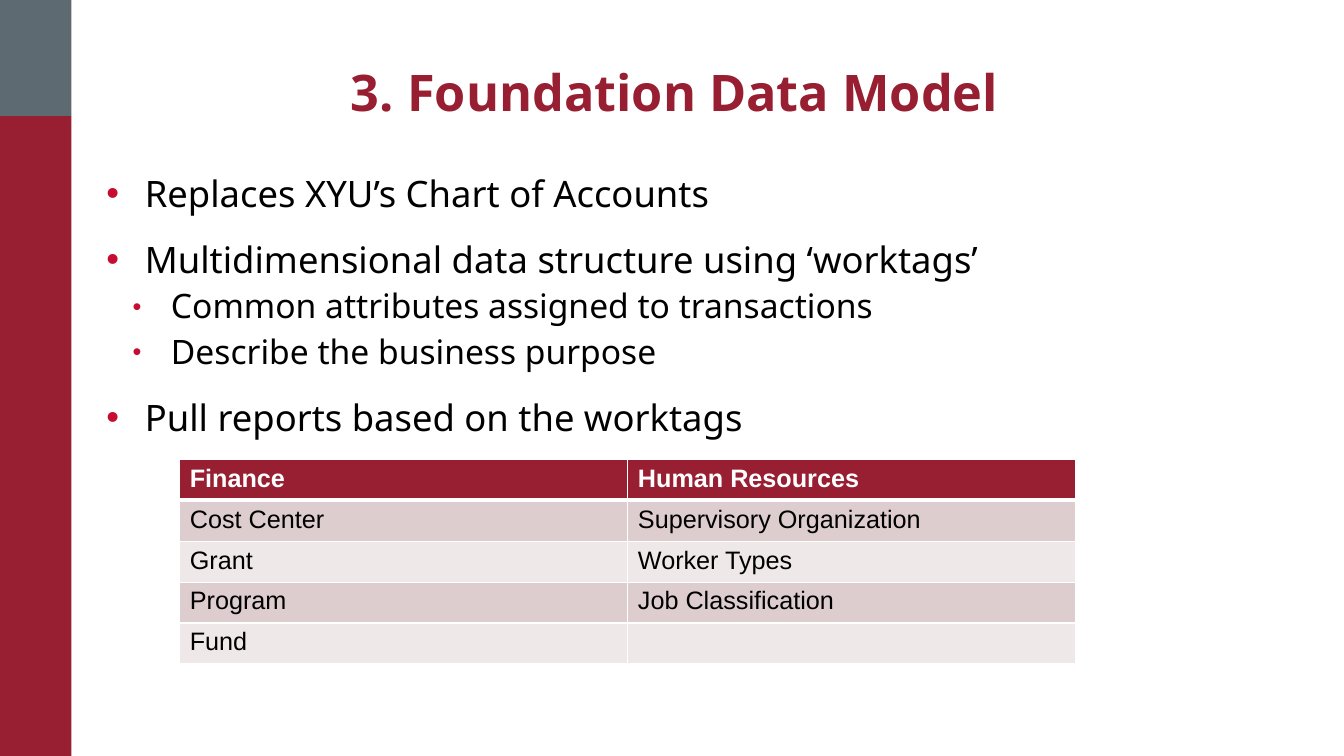
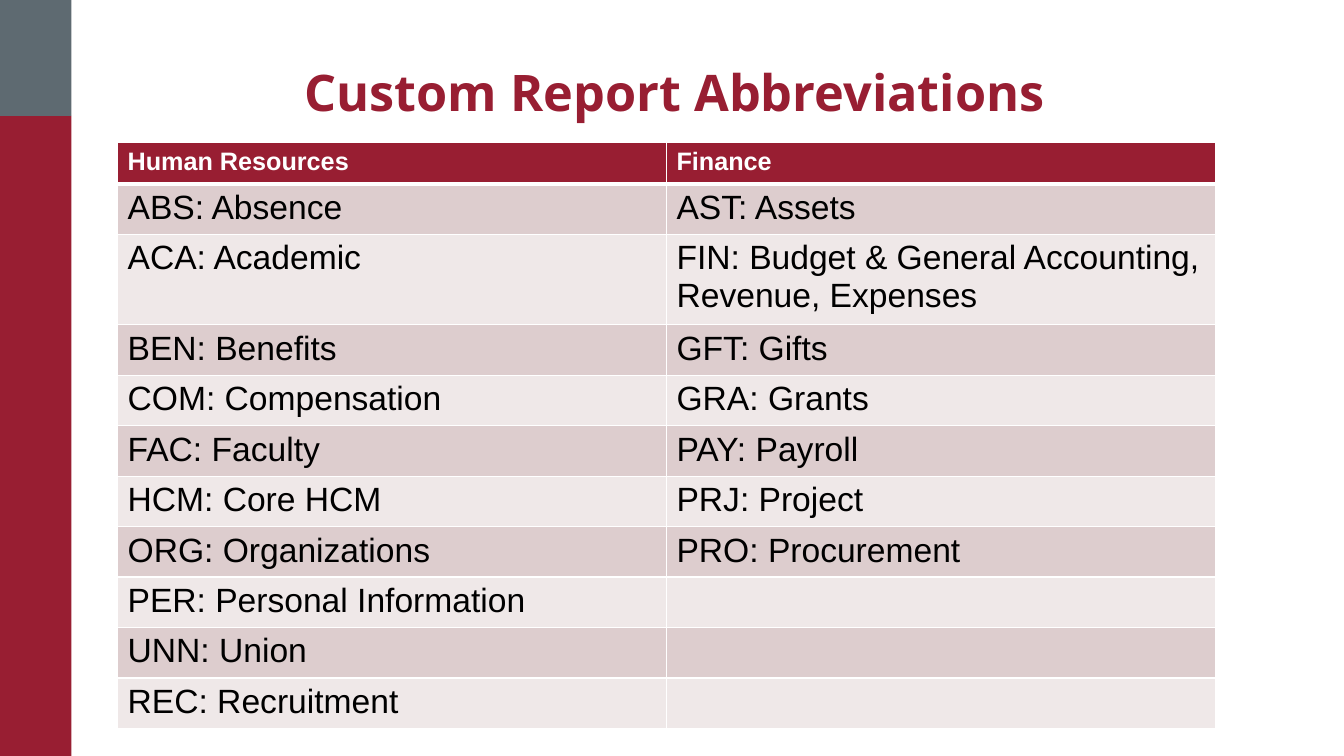
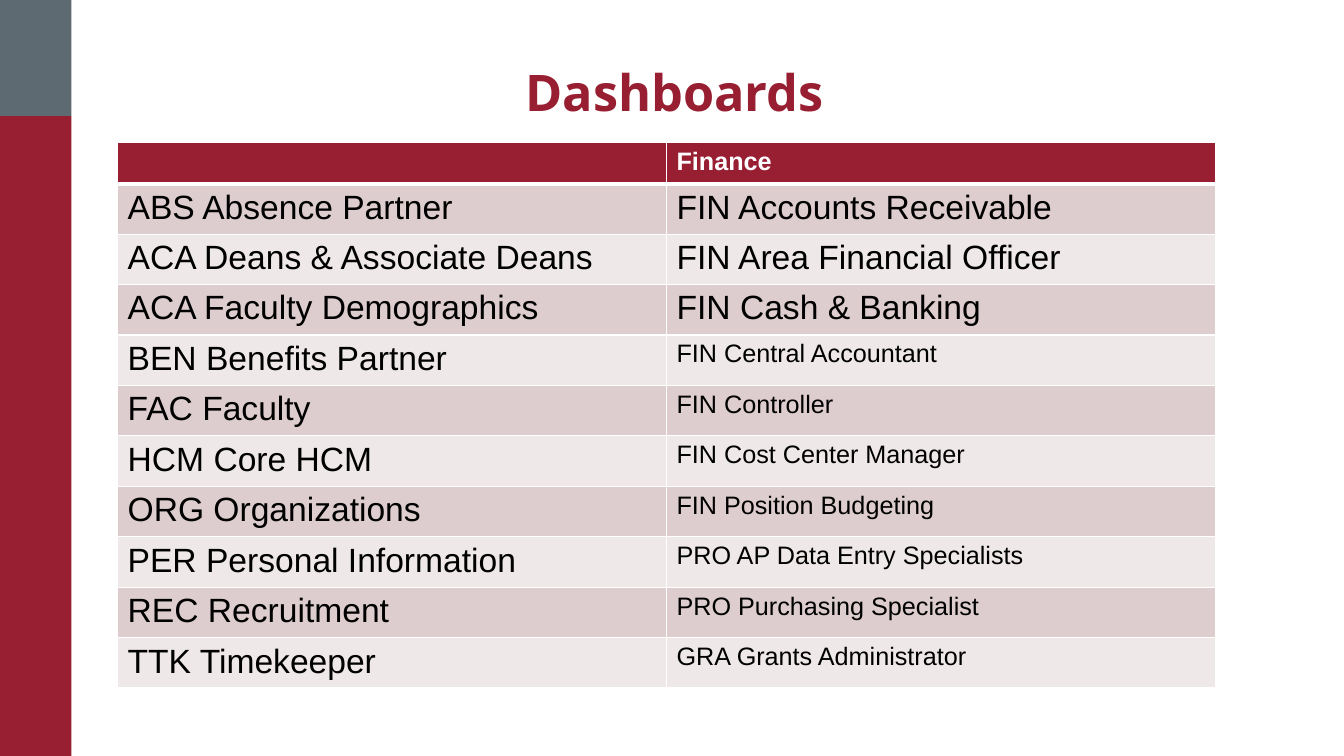
from pptx import Presentation
from pptx.dml.color import RGBColor as RGB
from pptx.enum.shapes import MSO_SHAPE as Shape
from pptx.enum.text import MSO_ANCHOR as Anchor, MSO_AUTO_SIZE as Fit, PP_ALIGN as Align
from pptx.oxml import parse_xml
from pptx.oxml.ns import nsdecls
from pptx.util import Inches, Pt

COLS, ROWS = 160, 90
UNIT = Inches(1) / 12
INK = {"red": "981E32", "gray": "5E6A71", "dot": "C60C30", "text": "000000",
       "white": "FFFFFF", "dark": "DDCDCE", "light": "EFE8E8"}
HEAD, BODY = "Noto Sans", "Arial"

SIDE, SPLIT = 8.5, 13.8
TITLE = (8.6, 7.4, 143.4, 7.8)
LIST = (3.8, 19.8, 139.2, 61.7)
SMALL = (21.4, 54.7, 106.7)
WIDE = (14, 17, 130.7)
ROW = 4.87

# size, left indent in inches, line spacing, space before, bullet percent
LEVELS = [(26, 0.62, 1.0, 16, 100), (24, 0.88, 0.95, 5.3, 75)]


def grid(*cells):
    return [round(n * UNIT) for n in cells]


def color(name):
    return RGB.from_string(INK[name])


def write(para, text, font=BODY, size=18, ink="text", bold=False):
    run = para.add_run()
    run.text = text
    run.font.name, run.font.size, run.font.bold = font, Pt(size), bold
    run.font.color.rgb = color(ink)


def frame(slide, box):
    area = slide.shapes.add_textbox(*grid(*box)).text_frame
    area.word_wrap = True
    area.margin_left = area.margin_right = Inches(0.5)
    return area


def band(slide, box, ink):
    shape = slide.shapes.add_shape(Shape.RECTANGLE, *grid(*box))
    shape.shadow.inherit = False
    shape.fill.solid()
    shape.fill.fore_color.rgb = color(ink)
    shape.line.fill.background()


def title(slide, text, box=TITLE):
    area = frame(slide, box)
    area.vertical_anchor = Anchor.BOTTOM
    area.auto_size = Fit.SHAPE_TO_FIT_TEXT
    para = area.paragraphs[0]
    para.alignment, para.line_spacing = Align.CENTER, 0.9
    write(para, text, font=HEAD, size=36, ink="red", bold=True)


def page(deck, text):
    """Add a slide with the side bands and a title."""
    slide = deck.slides.add_slide(deck.slide_layouts[6])
    band(slide, (0, SPLIT, SIDE, ROWS - SPLIT), "red")
    band(slide, (0, 0, SIDE, SPLIT), "gray")
    title(slide, text)
    return slide


def bullets(slide, items, box=LIST):
    area = frame(slide, box)
    for i, (level, text) in enumerate(items):
        size, left, lines, before, dot = LEVELS[level]
        para = area.paragraphs[0] if i == 0 else area.add_paragraph()
        para.level, para.line_spacing, para.space_before = level, lines, Pt(before)
        props = para._p.get_or_add_pPr()
        props.set("marL", str(Inches(left)))
        props.set("indent", str(Inches(-0.38)))
        for tag in (f'buClr {nsdecls("a")}><a:srgbClr val="{INK["dot"]}"/></a:buClr',
                    f'buSzPct {nsdecls("a")} val="{dot * 1000}"/',
                    f'buFont {nsdecls("a")} typeface="Arial"/',
                    f'buChar {nsdecls("a")} char="•"/'):
            props.append(parse_xml(f"<a:{tag}>"))
        write(para, text, font=HEAD, size=size)


def border(cell, **widths):
    """Draw white cell sides; widths are points for L, R, T and B in that order."""
    props = cell._tc.get_or_add_tcPr()
    for i, (side, width) in enumerate(widths.items()):
        props.insert(i, parse_xml(
            f'<a:ln{side} {nsdecls("a")} w="{Pt(width)}"><a:solidFill>'
            f'<a:srgbClr val="{INK["white"]}"/></a:solidFill></a:ln{side}>'))


def table(slide, box, rows, size):
    """Draw rows with a header; size(row, col) gives the points of body text."""
    wide = len(rows[0])
    area = grid(*box, ROW * len(rows))
    grown = slide.shapes.add_table(len(rows), wide, *area).table
    for r, row in enumerate(rows):
        grown.rows[r].height = grid(ROW)[0]
        for c, text in enumerate(row):
            cell, head = grown.cell(r, c), r == 0
            cell.fill.solid()
            cell.fill.fore_color.rgb = color("red" if head else "dark" if r % 2 else "light")
            border(cell, L=1, R=1, T=3 if r == 1 else 1, B=3 if head else 1)
            if text:
                write(cell.text_frame.paragraphs[0], text, size=18 if head else size(r, c),
                      ink="white" if head else "text", bold=head)


MODEL = [
    ("Finance", "Human Resources"),
    ("Cost Center", "Supervisory Organization"),
    ("Grant", "Worker Types"),
    ("Program", "Job Classification"),
    ("Fund", ""),
]
POINTS = [
    (0, "Replaces XYU’s Chart of Accounts"),
    (0, "Multidimensional data structure using ‘worktags’"),
    (1, "Common attributes assigned to transactions"),
    (1, "Describe the business purpose"),
    (0, "Pull reports based on the worktags"),
]
CODES = [
    ("Human Resources", "Finance"),
    ("ABS: Absence", "AST: Assets"),
    ("ACA: Academic", "FIN: Budget & General Accounting, Revenue, Expenses"),
    ("BEN: Benefits", "GFT: Gifts"),
    ("COM: Compensation", "GRA: Grants"),
    ("FAC: Faculty", "PAY: Payroll"),
    ("HCM: Core HCM", "PRJ: Project"),
    ("ORG: Organizations", "PRO: Procurement"),
    ("PER: Personal Information", ""),
    ("UNN: Union", ""),
    ("REC: Recruitment", ""),
]
BOARDS = [
    ("", "Finance"),
    ("ABS Absence Partner", "FIN Accounts Receivable"),
    ("ACA Deans & Associate Deans", "FIN Area Financial Officer"),
    ("ACA Faculty Demographics", "FIN Cash & Banking"),
    ("BEN Benefits Partner", "FIN Central Accountant"),
    ("FAC Faculty", "FIN Controller"),
    ("HCM Core HCM", "FIN Cost Center Manager"),
    ("ORG Organizations", "FIN Position Budgeting"),
    ("PER Personal Information", "PRO AP Data Entry Specialists"),
    ("REC Recruitment", "PRO Purchasing Specialist"),
    ("TTK Timekeeper", "GRA Grants Administrator"),
]


def main():
    deck = Presentation()
    deck.slide_width, deck.slide_height = grid(COLS, ROWS)

    slide = page(deck, "3. Foundation Data Model")
    bullets(slide, POINTS)
    table(slide, SMALL, MODEL, lambda r, c: 18)

    slide = page(deck, "Custom Report Abbreviations")
    table(slide, WIDE, CODES, lambda r, c: 24)

    slide = page(deck, "Dashboards")
    table(slide, WIDE, BOARDS, lambda r, c: 18 if c == 1 and r > 3 else 24)

    deck.save("out.pptx")


if __name__ == "__main__":
    main()
